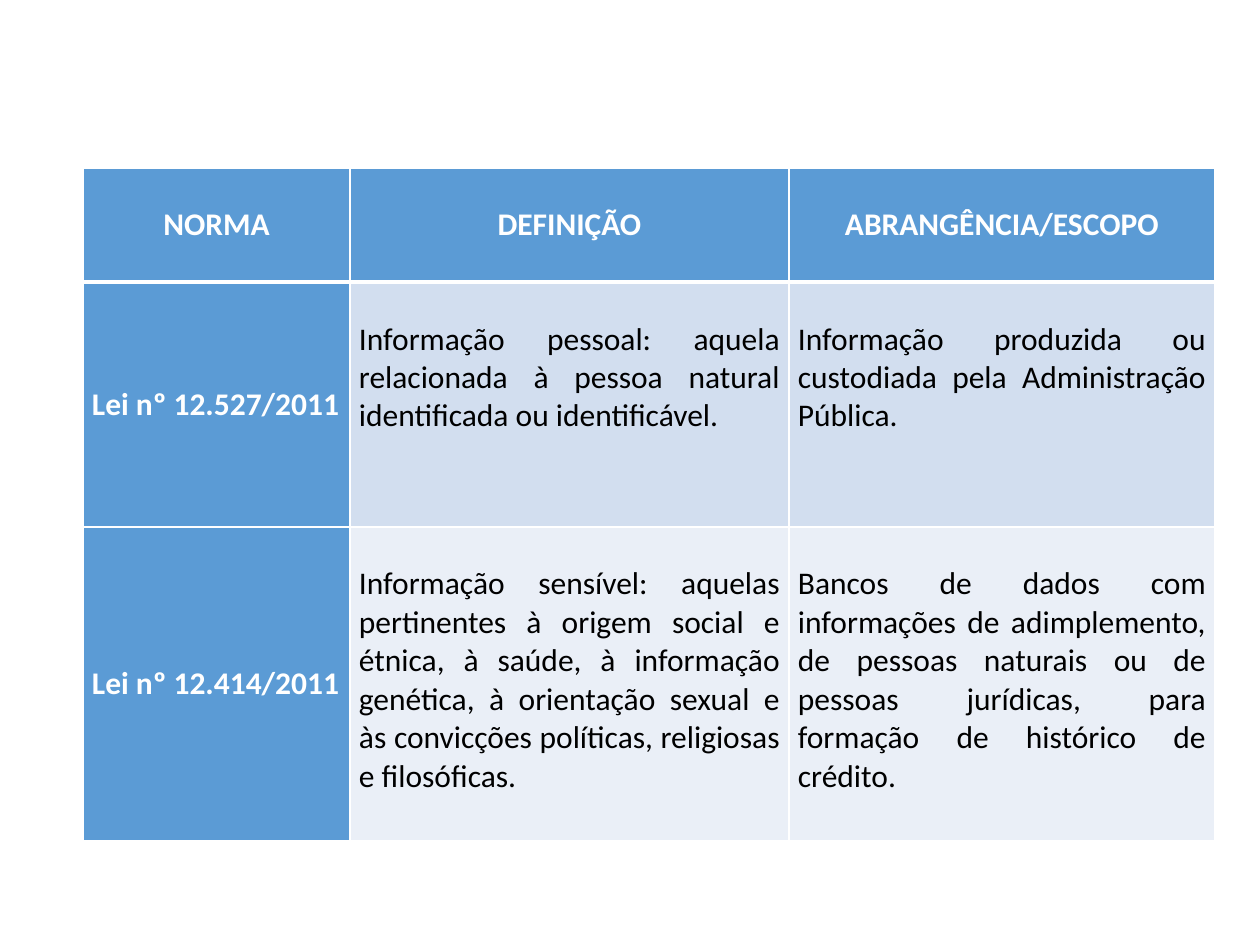
from dataclasses import dataclass

from lxml import etree
from pptx import Presentation, util as u
from pptx.dml.color import RGBColor
from pptx.enum import text
from pptx.oxml import ns

EMU_PER_PX = 914400 / 126
COLORS = {
    "heading": "5B9BD5",
    "band_dark": "D2DEEF",
    "band_light": "EAEFF7",
    "white": "FFFFFF",
    "black": "000000",
}
LEFT, TOP = 83, 168
COLUMN_WIDTHS = (267, 439, 426)
SIDE_MARGIN = 9
LINE_HEIGHT = 38


@dataclass(frozen=True)
class CellStyle:
    fill: str
    ink: str
    bold: bool
    align: text.PP_ALIGN
    anchor: text.MSO_ANCHOR
    top_margin: int = 0


@dataclass(frozen=True)
class NormRow:
    height: int
    texts: tuple[str, str, str]
    styles: tuple[CellStyle, CellStyle, CellStyle]
    top_rule: int = 1
    bottom_rule: int = 1


def heading_style(align: text.PP_ALIGN) -> CellStyle:
    return CellStyle("heading", "white", True, align, text.MSO_ANCHOR.MIDDLE)


def body_style(fill: str) -> CellStyle:
    return CellStyle(fill, "black", False, text.PP_ALIGN.JUSTIFY,
                     text.MSO_ANCHOR.TOP, LINE_HEIGHT)


HEADER = heading_style(text.PP_ALIGN.CENTER)
NORM = heading_style(text.PP_ALIGN.LEFT)
DARK = body_style("band_dark")
LIGHT = body_style("band_light")

ROWS = (
    NormRow(114, ("NORMA", "DEFINIÇÃO", "ABRANGÊNCIA/ESCOPO"),
            (HEADER, HEADER, HEADER), bottom_rule=3),
    NormRow(245, (
        "Lei nº 12.527/2011",
        "Informação pessoal: aquela relacionada à pessoa natural "
        "identificada ou identificável.",
        "Informação produzida ou custodiada pela Administração Pública.",
    ), (NORM, DARK, DARK), top_rule=3),
    NormRow(314, (
        "Lei nº 12.414/2011",
        "Informação sensível: aquelas pertinentes à origem social e étnica, "
        "à saúde, à informação genética, à orientação sexual e às convicções "
        "políticas, religiosas e filosóficas.",
        "Bancos de dados com informações de adimplemento, de pessoas naturais "
        "ou de pessoas jurídicas, para formação de histórico de crédito.",
    ), (NORM, LIGHT, LIGHT)),
)


def px(length: int) -> u.Emu:
    return u.Emu(round(length * EMU_PER_PX))


def rgb(name: str) -> RGBColor:
    return RGBColor.from_string(COLORS[name])


def draw_borders(cell, top: int, bottom: int) -> None:
    """Add white rules; they must precede the cell's fill in the XML."""
    properties = cell._tc.get_or_add_tcPr()
    for side, points in (("L", 1), ("R", 1), ("T", top), ("B", bottom)):
        rule = etree.SubElement(properties, ns.qn(f"a:ln{side}"),
                                w=str(u.Pt(points)))
        fill = etree.SubElement(rule, ns.qn("a:solidFill"))
        etree.SubElement(fill, ns.qn("a:srgbClr"), val=COLORS["white"])


def draw_cell(cell, wording: str, style: CellStyle, row: NormRow) -> None:
    draw_borders(cell, row.top_rule, row.bottom_rule)
    cell.fill.solid()
    cell.fill.fore_color.rgb = rgb(style.fill)
    cell.margin_left = cell.margin_right = px(SIDE_MARGIN)
    cell.margin_top = px(style.top_margin)
    cell.margin_bottom = 0
    cell.vertical_anchor = style.anchor
    cell.text_frame.text = wording
    paragraph = cell.text_frame.paragraphs[0]
    paragraph.alignment = style.align
    font = paragraph.runs[0].font
    font.name = "Calibri"
    font.size = u.Pt(18)
    font.bold = style.bold
    font.color.rgb = rgb(style.ink)


def draw_norms(slide) -> None:
    norms = slide.shapes.add_table(
        len(ROWS), len(COLUMN_WIDTHS), px(LEFT), px(TOP),
        px(sum(COLUMN_WIDTHS)), px(sum(row.height for row in ROWS))).table
    norms.horz_banding = False
    for column, width in zip(norms.columns, COLUMN_WIDTHS):
        column.width = px(width)
    for table_row, row in zip(norms.rows, ROWS):
        table_row.height = px(row.height)
        for cell, wording, style in zip(table_row.cells, row.texts, row.styles):
            draw_cell(cell, wording, style, row)


def main() -> None:
    deck = Presentation()
    deck.slide_width, deck.slide_height = px(1260), px(945)
    draw_norms(deck.slides.add_slide(deck.slide_layouts[6]))
    deck.save("out.pptx")


if __name__ == "__main__":
    main()
